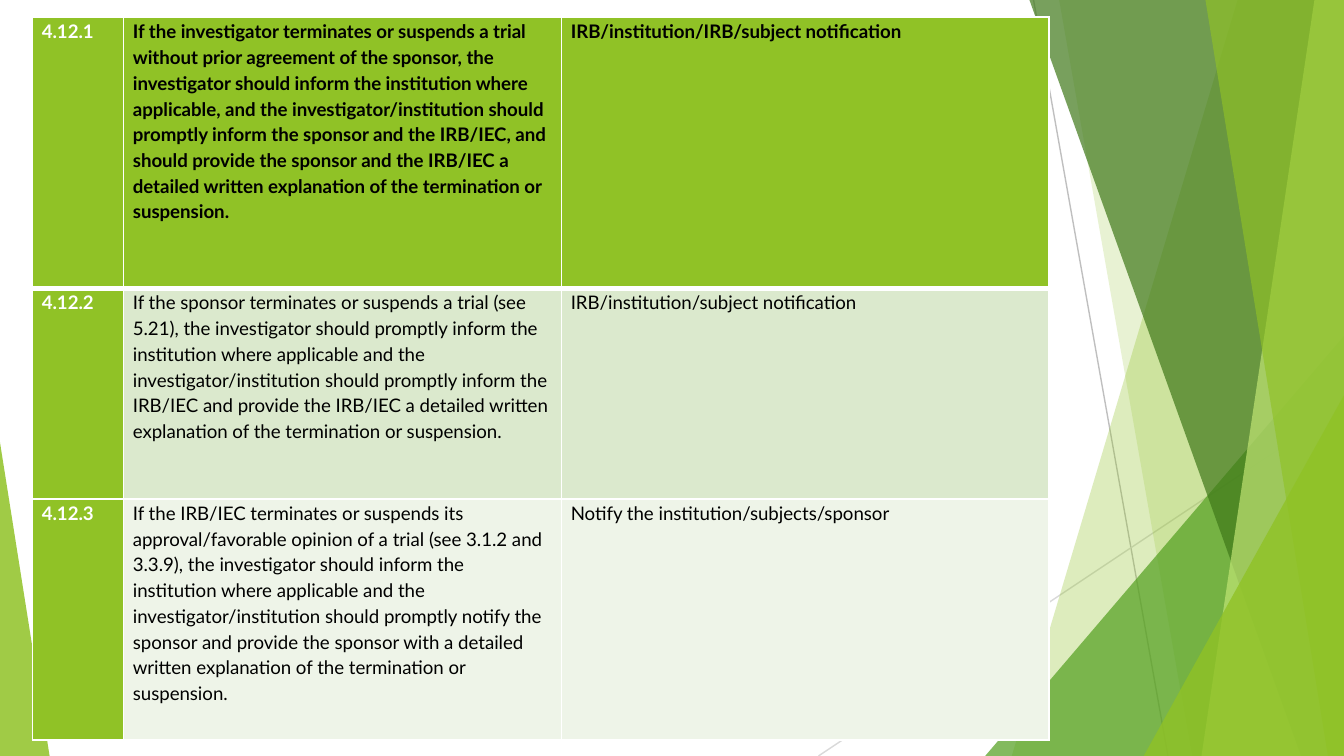
"""Build the slide on trial termination duties beside a green faceted backdrop."""
import pptx
import pptx.dml.color
import pptx.enum.shapes
import pptx.oxml.ns
import pptx.oxml.xmlchemy
import pptx.util

Pt = pptx.util.Pt
RGB = pptx.dml.color.RGBColor
qn = pptx.oxml.ns.qn
make = pptx.oxml.xmlchemy.OxmlElement
KIND = pptx.enum.shapes.MSO_SHAPE.ISOSCELES_TRIANGLE
LINK = pptx.enum.shapes.MSO_CONNECTOR.STRAIGHT

WHITE = RGB(0xFF, 0xFF, 0xFF)
BLACK = RGB(0x00, 0x00, 0x00)
GREEN = RGB(0x90, 0xC2, 0x26)
LEAF = RGB(0x54, 0xA0, 0x21)
PINE = RGB(0x3F, 0x78, 0x19)
LIME = RGB(0xC0, 0xE4, 0x74)
MIST = RGB(0xDB, 0xE9, 0xCD)
PALE = RGB(0xEE, 0xF4, 0xE8)
GREY = RGB(0xBF, 0xBF, 0xBF)
SILVER = RGB(0xD9, 0xD9, 0xD9)
WIDE, HIGH = 720, 405

deck = pptx.Presentation()
deck.slide_width, deck.slide_height = Pt(WIDE), Pt(HIGH)
slide = deck.slides.add_slide(deck.slide_layouts[6])
shapes = slide.shapes


def pane(top, foot):
    build = shapes.build_freeform(Pt(top), 0)
    build.add_line_segments(
        [(Pt(WIDE), 0), (Pt(WIDE), Pt(HIGH)), (Pt(foot), Pt(HIGH))], close=True)
    return build.convert_to_shape()


def wedge(left, top, right, peak):
    shape = shapes.add_shape(KIND, Pt(left), Pt(top), Pt(right - left), Pt(HIGH - top))
    shape.adjustments[0] = peak
    return shape


for x1, y1, x2, y2, color in [
    (553.7, 0, 625.7, HIGH, GREY),
    (WIDE, 217.4, 438.5, HIGH, SILVER),
]:
    line = shapes.add_connector(LINK, Pt(x1), Pt(y1), Pt(x2), Pt(y2))
    line.line.color.rgb = color
    line.line.width = Pt(0.75)
    line._element.spPr.append(make("a:effectLst"))

for facet, color, alpha in [
    (pane(663, 542), GREEN, 30),
    (pane(567.4, 638.6), GREEN, 20),
    (wedge(527.8, 180, WIDE, 1), LEAF, 72),
    (pane(551.5, 697), PINE, 70),
    (pane(704.2, 643.7), LIME, 70),
    (pane(645.8, 711.4), GREEN, 65),
    (wedge(612.7, 211.7, WIDE, 1), GREEN, 80),
    (wedge(0, 236.9, 26.6, 0), GREEN, 85),
]:
    facet.fill.solid()
    facet.fill.fore_color.rgb = color
    tint = make("a:alpha")
    tint.set("val", str(alpha * 1000))
    facet._element.spPr.find(".//" + qn("a:srgbClr")).append(tint)
    facet.line.fill.background()
    facet.shadow.inherit = False

ROWS = [
    ("4.12.1",
     "If the investigator terminates or suspends a trial without prior agreement of the "
     "sponsor, the investigator should inform the institution where applicable, and the "
     "investigator/institution should promptly inform the sponsor and the IRB/IEC, and "
     "should provide the sponsor and the IRB/IEC a detailed written explanation of the "
     "termination or suspension.",
     "IRB/institution/IRB/subject notification"),
    ("4.12.2",
     "If the sponsor terminates or suspends a trial (see 5.21), the investigator should "
     "promptly inform the institution where applicable and the investigator/institution "
     "should promptly inform the IRB/IEC and provide the IRB/IEC a detailed written "
     "explanation of the termination or suspension.",
     "IRB/institution/subject notification"),
    ("4.12.3",
     "If the IRB/IEC terminates or suspends its approval/favorable opinion of a trial "
     "(see 3.1.2 and 3.3.9), the investigator should inform the institution where "
     "applicable and the investigator/institution should promptly notify the sponsor and "
     "provide the sponsor with a detailed written explanation of the termination or "
     "suspension.",
     "Notify the institution/subjects/sponsor"),
]
WIDTHS = [48.8, 234.6, 261.2]
HEIGHTS = [145.2, 112.8, 129.4]
FILLS = [GREEN, MIST, PALE]

table = shapes.add_table(
    len(ROWS), len(WIDTHS), Pt(17.4), Pt(9.2), Pt(sum(WIDTHS)), Pt(sum(HEIGHTS))).table
table.first_col = True
for col, width in zip(table.columns, WIDTHS):
    col.width = Pt(width)

for r, texts in enumerate(ROWS):
    table.rows[r].height = Pt(HEIGHTS[r])
    for c, text in enumerate(texts):
        cell = table.cell(r, c)
        cell.margin_left = cell.margin_right = Pt(5)
        cell.margin_top = cell.margin_bottom = 0
        props = cell._tc.get_or_add_tcPr()
        for side in "LRTB":
            thick = (r, side) in [(0, "B"), (1, "T")]
            edge = make("a:ln" + side)
            edge.set("w", str(Pt(3 if thick else 1)))
            solid = make("a:solidFill")
            tone = make("a:srgbClr")
            tone.set("val", str(WHITE))
            solid.append(tone)
            edge.append(solid)
            props.append(edge)
        cell.fill.solid()
        cell.fill.fore_color.rgb = GREEN if c == 0 else FILLS[r]
        para = cell.text_frame.paragraphs[0]
        para.text = text
        para.line_spacing = 1.15
        font = para.runs[0].font
        font.name = "Lato"
        font.size = Pt(10)
        font.bold = r == 0 or c == 0
        font.color.rgb = WHITE if c == 0 else BLACK

deck.save("out.pptx")
